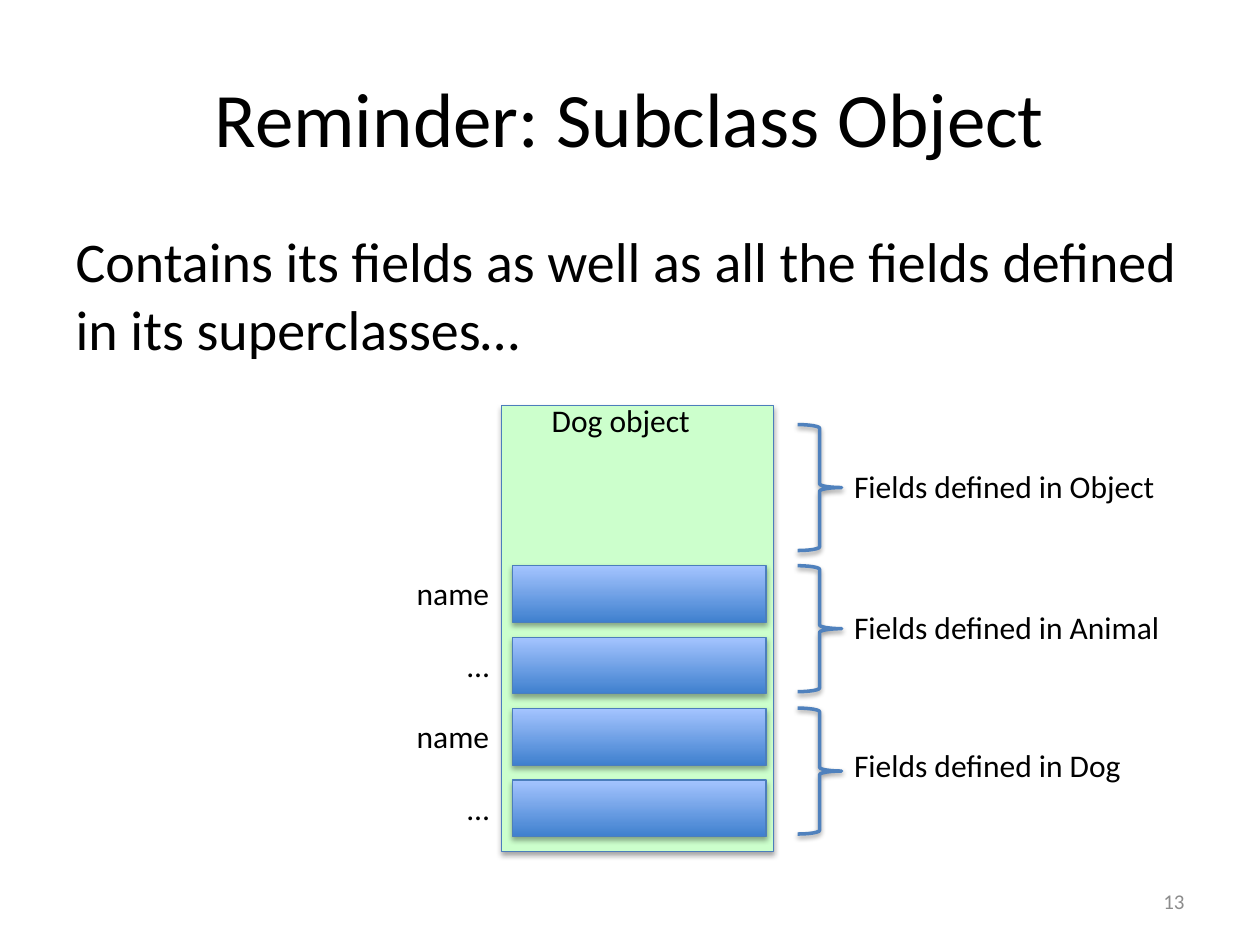
from lxml import etree
from pptx import Presentation
from pptx import util as u
from pptx.dml.color import RGBColor
from pptx.enum import shapes, text
from pptx.oxml import ns

FONT = "Calibri"
SLOT_TOP, SLOT_PITCH, SLOT_HEIGHT = 4.49, 0.567, 0.45
SLOT_NAMES = ["name", "…", "name", "…"]
# class name, top of its brace, top of its label
FIELD_GROUPS = [("Object", 3.37, 3.66), ("Animal", 4.49, 4.78), ("Dog", 5.62, 5.87)]


def color(value):
    return RGBColor.from_string(value)


def inches(*lengths):
    return [u.Inches(length) for length in lengths]


def format_text(shape, size, align, ink="000000"):
    paragraph = shape.text_frame.paragraphs[0]
    paragraph.alignment = align
    font = paragraph.runs[0].font
    font.name, font.size = FONT, u.Pt(size)
    font.color.rgb = color(ink)


def fill_placeholder(placeholder, box, content, size, align):
    placeholder.left, placeholder.top, placeholder.width, placeholder.height = inches(*box)
    placeholder.text_frame.text = content
    format_text(placeholder, size, align)


def remove_bullet(paragraph):
    properties = paragraph._p.get_or_add_pPr()
    properties.set("marL", "0")
    properties.set("indent", "0")
    etree.SubElement(properties, ns.qn("a:buNone"))


def add_label(slide, box, content, align=text.PP_ALIGN.LEFT, wrap=False, size=18, ink="000000"):
    label = slide.shapes.add_textbox(*inches(*box))
    label.text_frame.text = content
    label.text_frame.word_wrap = wrap
    format_text(label, size, align, ink)
    return label


def add_shadow(shape, distance, opacity):
    """Give the shape a soft shadow straight below it."""
    shape.shadow.inherit = False
    effects = shape._element.spPr.find(ns.qn("a:effectLst"))
    shadow = etree.SubElement(effects, ns.qn("a:outerShdw"), blurRad=str(u.Pt(3.1)),
                              dist=str(u.Pt(distance)), dir="5400000", rotWithShape="0")
    black = etree.SubElement(shadow, ns.qn("a:srgbClr"), val="000000")
    etree.SubElement(black, ns.qn("a:alpha"), val=str(opacity * 1000))


def add_box(slide, box):
    rectangle = slide.shapes.add_shape(shapes.MSO_SHAPE.RECTANGLE, *inches(*box))
    rectangle.line.color.rgb = color("4B7EBC")
    rectangle.line.width = u.Pt(0.75)
    add_shadow(rectangle, 1.8, 35)
    return rectangle


def add_object_box(slide):
    rectangle = add_box(slide, (3.98, 3.22, 2.16, 3.54))
    rectangle.fill.solid()
    rectangle.fill.fore_color.rgb = color("CCFFCC")
    add_label(slide, (4.28, 3.13, 1.31, 0.4), "Dog object")


def add_slot(slide, row, name):
    top = SLOT_TOP + row * SLOT_PITCH
    slot = add_box(slide, (4.07, top, 2.01, SLOT_HEIGHT))
    slot.fill.gradient()
    slot.fill.gradient_angle = 90
    for stop, shade in zip(slot.fill.gradient_stops, ("3F80CE", "A4C4FF")):
        stop.color.rgb = color(shade)
    add_label(slide, (2.69, top + 0.02, 1.29, 0.4), name, text.PP_ALIGN.RIGHT, wrap=True)


def add_field_group(slide, class_name, brace_top, label_top):
    brace = slide.shapes.add_shape(shapes.MSO_SHAPE.RIGHT_BRACE,
                                   *inches(6.33, brace_top, 0.35, 1))
    brace.fill.background()
    brace.line.color.rgb = color("4F81BD")
    brace.line.width = u.Pt(2)
    add_shadow(brace, 1.6, 38)
    add_label(slide, (6.68, label_top, 2.65, 0.4), f"Fields defined in {class_name}")


def main():
    presentation = Presentation()
    presentation.slide_width, presentation.slide_height = inches(10, 7.5)
    slide = presentation.slides.add_slide(presentation.slide_layouts[1])

    title, body = slide.placeholders
    fill_placeholder(title, (0.5, 0.3, 9, 1.25), "Reminder: Subclass Object",
                     44, text.PP_ALIGN.CENTER)
    fill_placeholder(body, (0.5, 1.75, 9, 4.95),
                     "Contains its fields as well as all the fields defined in its superclasses…",
                     32, text.PP_ALIGN.LEFT)
    remove_bullet(body.text_frame.paragraphs[0])

    add_object_box(slide)
    for row, name in enumerate(SLOT_NAMES):
        add_slot(slide, row, name)
    for group in FIELD_GROUPS:
        add_field_group(slide, *group)

    number = add_label(slide, (7.17, 6.95, 2.33, 0.4), "13", text.PP_ALIGN.RIGHT,
                       wrap=True, size=12, ink="8C8C8C")
    number.text_frame.vertical_anchor = text.MSO_ANCHOR.MIDDLE
    presentation.save("out.pptx")


if __name__ == "__main__":
    main()
